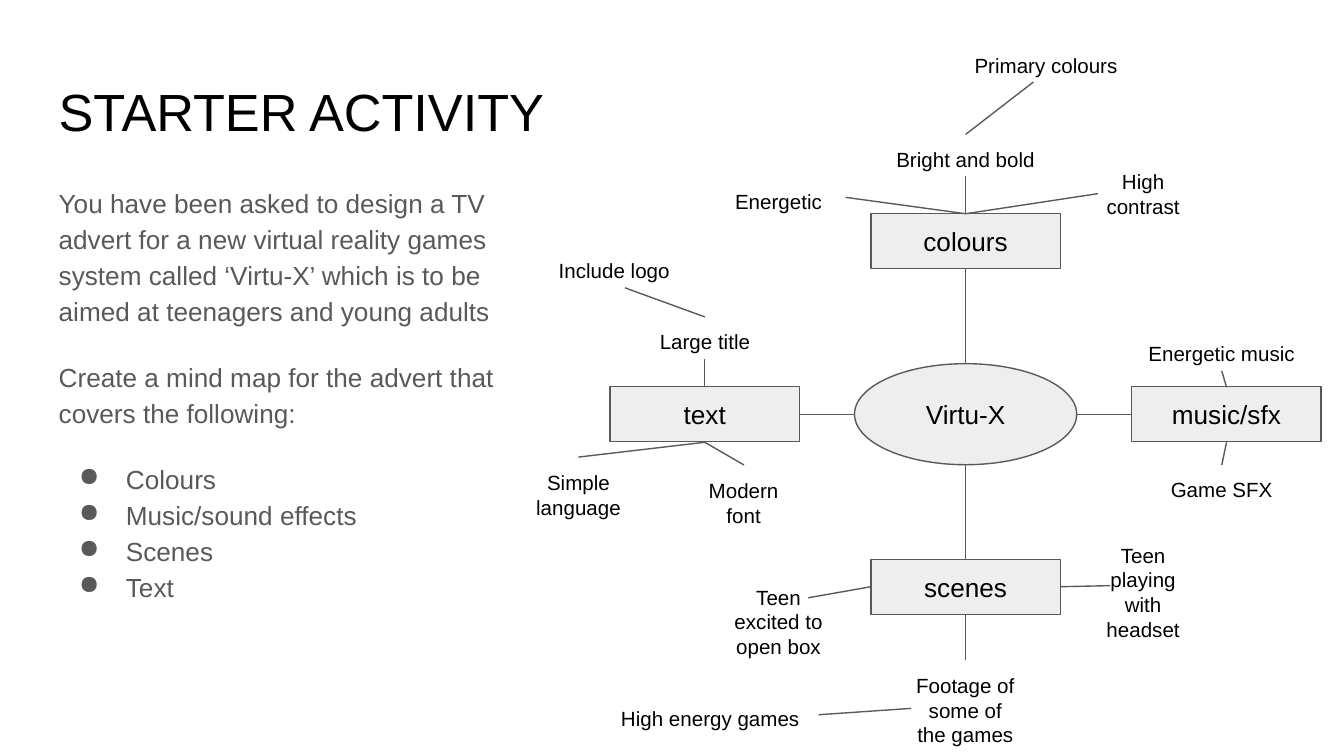
import pptx
import pptx.dml.color
import pptx.enum.shapes
import pptx.enum.text
import pptx.oxml.ns
import pptx.util
from lxml import etree

Cm = pptx.util.Cm
Pt = pptx.util.Pt
Shapes = pptx.enum.shapes.MSO_SHAPE
Align = pptx.enum.text.PP_ALIGN

BLACK, GREY, PALE = "000000", "595959", "EEEEEE"
HUB_X, HUB_Y = 18.25, 7.83
HUB_WIDTH, HUB_HEIGHT = 4.2, 1.91
BRANCH_WIDTH, BRANCH_HEIGHT = 3.58, 1.04
REACH_X, REACH_Y = 4.93, 3.27

BRANCHES = [("colours", 0, -1), ("scenes", 0, 1), ("text", -1, 0), ("music/sfx", 1, 0)]

IDEAS = [
    ("Bright and bold", 16.36, 2.54, 3.78, Align.CENTER),
    ("Energetic", 13.46, 3.33, 2.51, Align.CENTER),
    ("High contrast", 20.35, 2.95, 2.51, Align.CENTER),
    ("Large title", 12.07, 5.99, 2.51, Align.CENTER),
    ("Modern font", 12.8, 8.79, 2.51, Align.CENTER),
    ("Simple language", 9.68, 8.64, 2.51, Align.CENTER),
    ("Teen playing with headset", 20.35, 10.01, 2.51, Align.CENTER),
    ("Footage of some of the games", 16.99, 12.47, 2.51, Align.CENTER),
    ("Teen excited to open box", 13.46, 10.8, 2.51, Align.CENTER),
    ("Energetic music", 20.98, 6.22, 4.22, Align.CENTER),
    ("Game SFX", 20.98, 8.79, 4.22, Align.CENTER),
    ("Primary colours", 17.88, 0.76, 3.78, Align.CENTER),
    ("Include logo", 10.31, 4.65, 3, Align.LEFT),
    ("High energy games ", 11.25, 13.11, 4.22, Align.RIGHT),
]

IDEA_LINKS = [
    (18.25, 4.04, 15.98, 3.73),
    (18.25, 4.04, 18.25, 3.33),
    (18.25, 4.04, 20.75, 3.66),
    (13.32, 7.32, 13.32, 6.78),
    (13.32, 8.36, 14.06, 8.79),
    (13.32, 8.36, 10.93, 8.64),
    (16.46, 11.09, 15.27, 11.3),
    (18.25, 11.61, 18.25, 12.47),
    (20.04, 11.09, 20.98, 11.07),
    (23.18, 7.32, 23.09, 7.01),
    (23.18, 8.36, 23.09, 8.79),
    (18.25, 2.54, 19.53, 1.55),
    (11.81, 5.44, 13.32, 5.99),
    (15.47, 13.51, 17.22, 13.39),
]

BRIEF = [
    "You have been asked to design a TV advert for a new virtual reality games "
    "system called ‘Virtu-X’ which is to be aimed at teenagers and young adults",
    "Create a mind map for the advert that covers the following:",
]
TOPICS = ["Colours", "Music/sound effects", "Scenes", "Text"]


def color(value):
    """Return the colour for a hex string."""
    return pptx.dml.color.RGBColor.from_string(value)


def set_text(paragraph, text, size, font_color, alignment=Align.LEFT):
    """Write text into a paragraph and style it."""
    paragraph.text = text
    paragraph.alignment = alignment
    paragraph.font.name = "Arial"
    paragraph.font.size = Pt(size)
    paragraph.font.color.rgb = color(font_color)


def prepare_frame(shape):
    """Wrap the text of a shape and give it equal insets."""
    frame = shape.text_frame
    frame.word_wrap = True
    frame.margin_left = frame.margin_right = Cm(0.25)
    frame.margin_top = frame.margin_bottom = Cm(0.25)
    return frame


def add_text_box(slide, left, top, width, height):
    """Add an empty text box and return its text frame."""
    return prepare_frame(slide.shapes.add_textbox(Cm(left), Cm(top), Cm(width), Cm(height)))


def add_node(slide, kind, text, center_x, center_y, width, height):
    """Add a labelled mind map node around a centre point."""
    shape = slide.shapes.add_shape(
        kind, Cm(center_x - width / 2), Cm(center_y - height / 2), Cm(width), Cm(height))
    shape.shadow.inherit = False
    shape.fill.solid()
    shape.fill.fore_color.rgb = color(PALE)
    shape.line.color.rgb = color(GREY)
    shape.line.width = Pt(0.75)
    frame = prepare_frame(shape)
    frame.vertical_anchor = pptx.enum.text.MSO_ANCHOR.MIDDLE
    set_text(frame.paragraphs[0], text, 14, BLACK, Align.CENTER)


def add_link(slide, from_x, from_y, to_x, to_y):
    """Add a thin straight line between two points."""
    connector = slide.shapes.add_connector(
        pptx.enum.shapes.MSO_CONNECTOR.STRAIGHT, Cm(from_x), Cm(from_y), Cm(to_x), Cm(to_y))
    connector.line.color.rgb = color(GREY)
    connector.line.width = Pt(0.75)
    properties = connector.element.find(pptx.oxml.ns.qn("p:spPr"))
    etree.SubElement(properties, pptx.oxml.ns.qn("a:effectLst"))


def add_bullet(paragraph):
    """Give a paragraph a round bullet with a hanging indent."""
    properties = paragraph._p.get_or_add_pPr()
    properties.set("marL", str(Cm(1.27)))
    properties.set("indent", str(Cm(-0.89)))
    etree.SubElement(properties, pptx.oxml.ns.qn("a:buChar"), char="●")


def add_brief(slide):
    """Add the task description and its bulleted topics."""
    frame = add_text_box(slide, 0.86, 3.2, 9.45, 9.5)
    for index, text in enumerate(BRIEF + TOPICS):
        paragraph = frame.add_paragraph() if index else frame.paragraphs[0]
        set_text(paragraph, text, 14, GREY)
        paragraph.line_spacing = 1.15
        paragraph.space_before = Pt(16 if 0 < index <= len(BRIEF) else 0)
        if index >= len(BRIEF):
            add_bullet(paragraph)


def add_mind_map(slide):
    """Add the hub, its four branches and the ideas around them."""
    add_node(slide, Shapes.OVAL, "Virtu-X", HUB_X, HUB_Y, HUB_WIDTH, HUB_HEIGHT)
    for text, across, down in BRANCHES:
        center_x, center_y = HUB_X + across * REACH_X, HUB_Y + down * REACH_Y
        add_node(slide, Shapes.RECTANGLE, text, center_x, center_y, BRANCH_WIDTH, BRANCH_HEIGHT)
        add_link(slide,
                 HUB_X + across * HUB_WIDTH / 2, HUB_Y + down * HUB_HEIGHT / 2,
                 center_x - across * BRANCH_WIDTH / 2, center_y - down * BRANCH_HEIGHT / 2)
    for text, left, top, width, alignment in IDEAS:
        frame = add_text_box(slide, left, top, width, 0.79)
        set_text(frame.paragraphs[0], text, 11, BLACK, alignment)
    for link in IDEA_LINKS:
        add_link(slide, *link)


def main():
    """Build the starter activity slide and save it."""
    presentation = pptx.Presentation()
    presentation.slide_width = Cm(25.4)
    presentation.slide_height = Cm(14.29)
    slide = presentation.slides.add_slide(presentation.slide_layouts[6])
    title = add_text_box(slide, 0.86, 1.24, 20.12, 1.6)
    set_text(title.paragraphs[0], "STARTER ACTIVITY", 28, BLACK)
    add_brief(slide)
    add_mind_map(slide)
    presentation.save("out.pptx")


if __name__ == "__main__":
    main()
